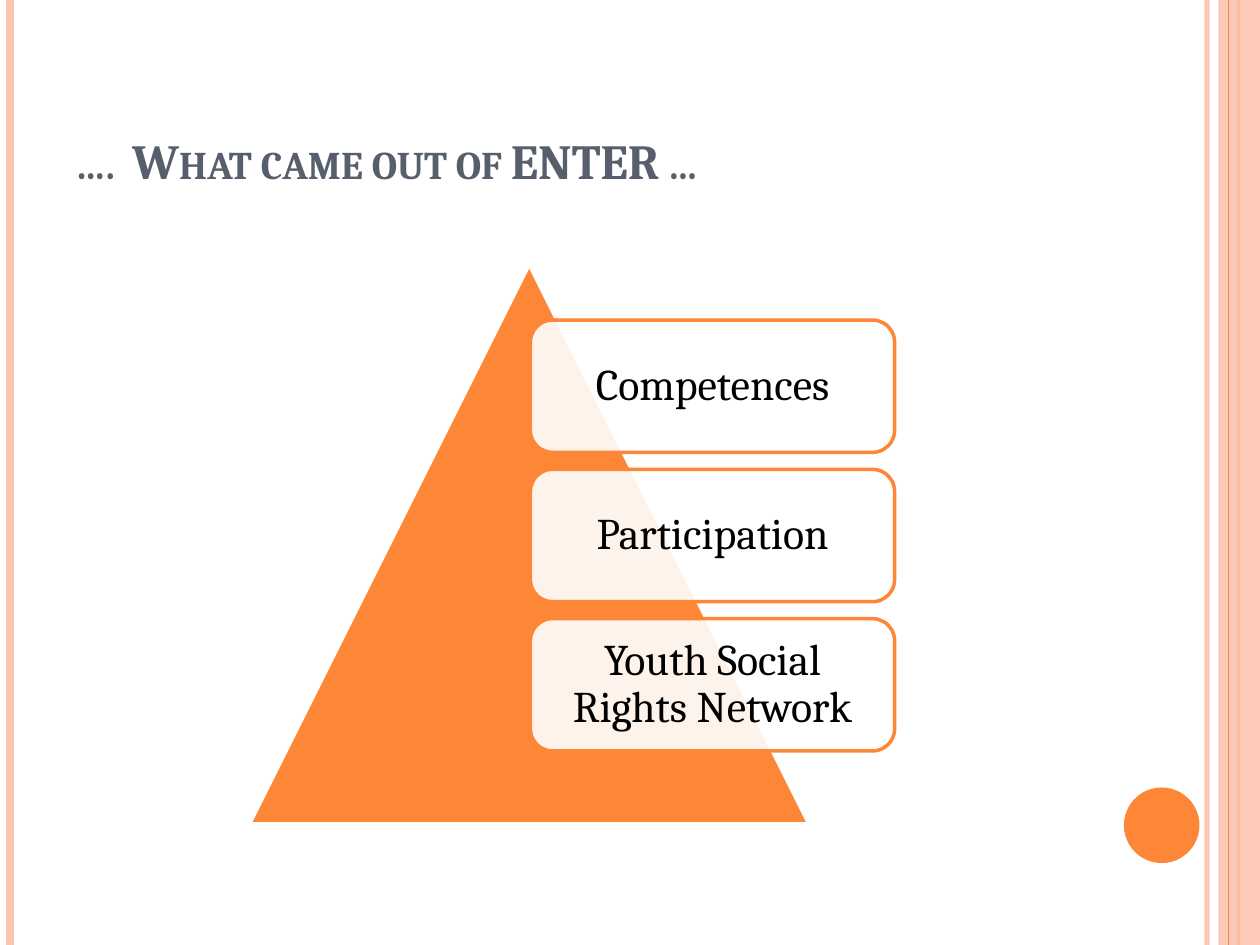
"""Build a slide with a pyramid and three result cards."""
from dataclasses import dataclass

from lxml import etree
from pptx import Presentation
from pptx.dml.color import RGBColor
from pptx.enum.shapes import MSO_CONNECTOR, MSO_SHAPE
from pptx.enum.text import MSO_ANCHOR, PP_ALIGN
from pptx.oxml.ns import qn
from pptx.util import Inches, Pt

RECT, OVAL = MSO_SHAPE.RECTANGLE, MSO_SHAPE.OVAL
PEAK, ROUND = MSO_SHAPE.ISOSCELES_TRIANGLE, MSO_SHAPE.ROUNDED_RECTANGLE
LINE = MSO_CONNECTOR.STRAIGHT
LEFT, CENTER = PP_ALIGN.LEFT, PP_ALIGN.CENTER
MIDDLE, BOTTOM = MSO_ANCHOR.MIDDLE, MSO_ANCHOR.BOTTOM
ORANGE, PEACH, SLATE = "FE8637", "FEC3AE", "575F6D"
WHITE, BLACK = "FFFFFF", "000000"
FONT = "Cambria"
CARDS = ["Competences", "Participation", "Youth Social Rights Network"]
CARD_TOP, CARD_STEP = 2.54, 1.185


@dataclass
class Stripe:
    """A vertical line over the full height of the slide."""
    x: float
    width: float
    color: str
    alpha: int = 100


@dataclass
class Box:
    """A preset shape with its place and look."""
    kind: int
    x: float
    y: float
    w: float
    h: float
    fill: str
    alpha: int = 100
    line: str = ""


STRIPES = [Stripe(9.58, 3, PEACH, 93), Stripe(0.08, 4.5, PEACH),
           Stripe(9.83, 1.5, ORANGE)]
BAND = Box(RECT, 9.67, 0, 0.33, 7.5, PEACH, 87)
EDGE = Stripe(9.75, 0.75, ORANGE)
DOT = Box(OVAL, 8.92, 6.25, 0.6, 0.6, ORANGE)
PYRAMID = Box(PEAK, 1.98, 2.1, 4.44, 4.44, ORANGE, line=WHITE)


def paint(fill, color: str, alpha: int = 100) -> None:
    """Set a solid fill from a hex colour and an opacity in percent."""
    fill.solid()
    fill.fore_color.rgb = RGBColor.from_string(color)
    if alpha < 100:
        tint = fill._xPr.find(qn("a:solidFill"))[0]
        etree.SubElement(tint, qn("a:alpha"), val=str(alpha * 1000))


def draw_stripe(slide, stripe: Stripe) -> None:
    """Draw a stripe from top to bottom."""
    x = Inches(stripe.x)
    line = slide.shapes.add_connector(LINE, x, 0, x, Inches(7.5))
    line.line.width = Pt(stripe.width)
    paint(line.line.fill, stripe.color, stripe.alpha)
    etree.SubElement(line._element.spPr, qn("a:effectLst"))


def draw_box(slide, box: Box):
    """Draw a preset shape and return it."""
    shape = slide.shapes.add_shape(
        box.kind, Inches(box.x), Inches(box.y), Inches(box.w), Inches(box.h))
    shape.shadow.inherit = False
    paint(shape.fill, box.fill, box.alpha)
    if box.line:
        shape.line.width = Pt(2)
        paint(shape.line.fill, box.line)
    else:
        shape.line.fill.background()
    return shape


def write(shape, text: str, *, size: float, color: str, bold: bool = False,
          small: bool = False, align=LEFT, anchor=MIDDLE,
          inset: float = 0.1, lead: float = 1.0) -> None:
    """Put formatted text into a shape."""
    frame = shape.text_frame
    frame.word_wrap = True
    frame.vertical_anchor = anchor
    frame.margin_left = frame.margin_right = Inches(inset)
    para = frame.paragraphs[0]
    para.alignment, para.line_spacing = align, lead
    run = para.add_run()
    run.text = text
    font = run.font
    font.name, font.size, font.bold = FONT, Pt(size), bold
    paint(font.fill, color)
    if small:
        font._element.set("cap", "small")


def main() -> None:
    """Build and save the slide."""
    deck = Presentation()
    deck.slide_width, deck.slide_height = Inches(10), Inches(7.5)
    slide = deck.slides.add_slide(deck.slide_layouts[5])
    for stripe in STRIPES:
        draw_stripe(slide, stripe)
    draw_box(slide, BAND)
    draw_stripe(slide, EDGE)
    draw_box(slide, DOT)

    title = slide.shapes.title
    title.left, title.top = Inches(0.5), Inches(0.3)
    title.width, title.height = Inches(8.17), Inches(1.25)
    write(title, "….  What came out of ENTER …", size=28, color=SLATE,
          bold=True, small=True, anchor=BOTTOM)

    draw_box(slide, PYRAMID)
    for row, text in enumerate(CARDS):
        y = CARD_TOP + row * CARD_STEP
        card = draw_box(slide, Box(ROUND, 4.21, y, 2.89, 1.05, WHITE, 90, ORANGE))
        write(card, text, size=25, color=BLACK, align=CENTER, inset=0.15, lead=0.9)
    deck.save("out.pptx")


if __name__ == "__main__":
    main()
